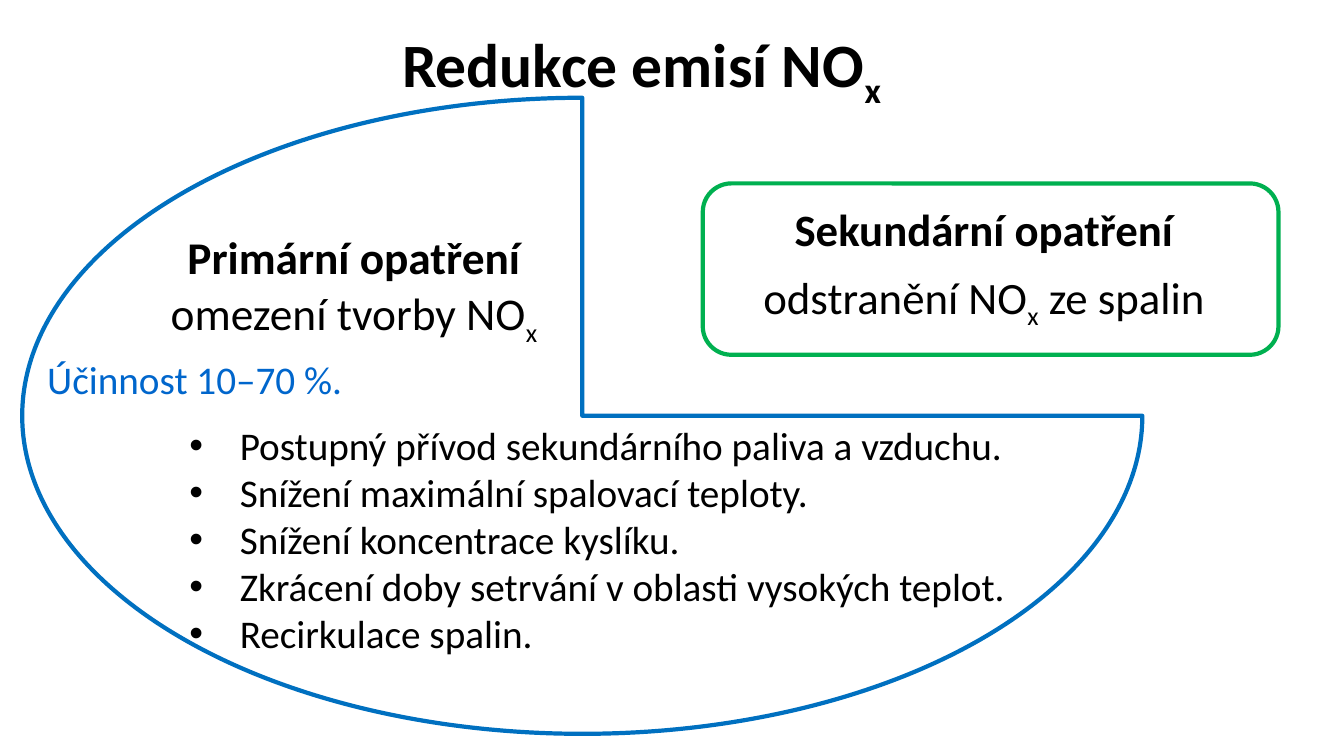
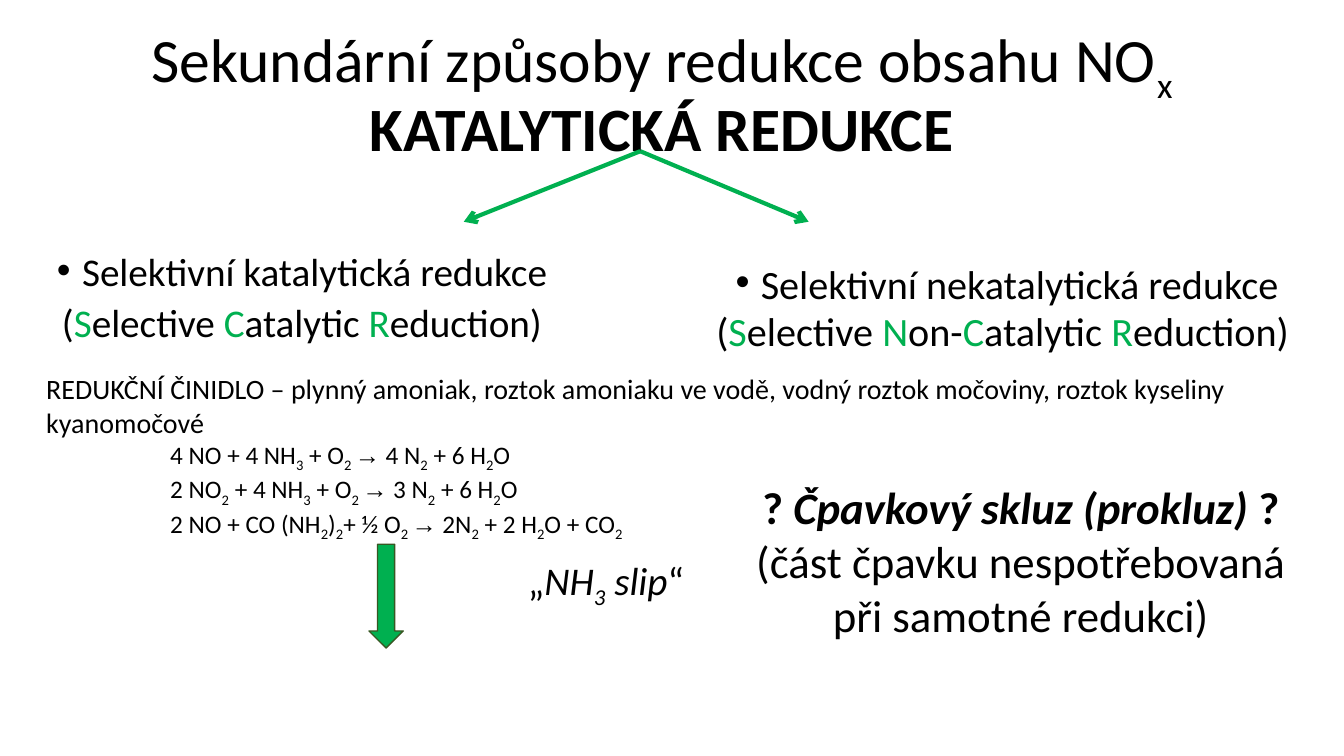
import pptx
import pptx.dml.color
import pptx.enum.shapes
import pptx.enum.text
import pptx.oxml
import pptx.oxml.ns
import pptx.util

PX = 9144  # 100 px to the inch
BLACK, GREEN, BLUE = "000000", "00B050", "0070C0"
SKY, MOSS = "0066CC", "385723"
FACE, SIGN = "Calibri", "Arial"
HEAD = 44
SHAPE = pptx.enum.shapes.MSO_SHAPE
MID = pptx.enum.text.PP_ALIGN.CENTER
LEFT = pptx.enum.text.PP_ALIGN.LEFT


def px(*sizes):
    return [pptx.util.Emu(size * PX) for size in sizes]


def color(code):
    return pptx.dml.color.RGBColor.from_string(code)


def add_xml(parent, tag, **attrs):
    item = pptx.oxml.parse_xml(f"<a:{tag} {pptx.oxml.ns.nsdecls('a')}/>")
    for name, value in attrs.items():
        item.set(name, value)
    parent.append(item)


def split(text, mark, style, base):
    """Make runs of text; every second piece between marks takes style."""
    pieces = text.split(mark)
    return [(piece, {**base, **(style if i % 2 else {})})
            for i, piece in enumerate(pieces) if piece]


def subs(text, **base):
    return split(text, "_", {"sub": True}, base)


def tint(text):
    return split(text, "*", {"hue": GREEN}, {})


def react(text):
    """Make the runs of a reaction, with its arrow in the sign font."""
    left, arrow, right = text.partition("→")
    return subs(left) + [(arrow, {"face": SIGN})] + subs(right)


def add_run(para, text, size, hue=BLACK, bold=False, slant=False,
            sub=False, face=FACE):
    if text == "\n":
        para.add_line_break()
        return
    run = para.add_run()
    run.text = text
    font = run.font
    font.name, font.size = face, pptx.util.Pt(size)
    font.bold, font.italic = bold, slant
    font.color.rgb = color(hue)
    if sub:
        run._r.get_or_add_rPr().set("baseline", "-25000")


def add_dot(para, depth):
    props = para._p.get_or_add_pPr()
    props.set("marL", str(depth * PX))
    props.set("indent", str(-depth * PX))
    add_xml(props, "buFont", typeface=SIGN)
    add_xml(props, "buChar", char="•")


def add_text(slide, box, size, lines, align=LEFT, lead=1.0, gap=0,
             dots=(), depth=25, middle=False, wrap=True):
    """Write lines of runs; dots lists the indexes of bulleted lines."""
    frame = slide.shapes.add_textbox(*px(*box)).text_frame
    frame.word_wrap = wrap
    if middle:
        frame.vertical_anchor = pptx.enum.text.MSO_ANCHOR.MIDDLE
    for i, runs in enumerate(lines):
        para = frame.paragraphs[0] if i == 0 else frame.add_paragraph()
        para.alignment = align
        para.line_spacing = lead
        para.space_before = pptx.util.Pt(gap)
        if i in dots:
            add_dot(para, depth)
        for text, style in runs:
            add_run(para, text, size, **style)


def add_title(slide, box, runs, align=LEFT):
    add_text(slide, box, HEAD, [runs], align, lead=0.9, middle=True)


def add_form(slide, kind, box, edge, width, fill=None):
    form = slide.shapes.add_shape(kind, *px(*box))
    form.shadow.inherit = False
    if fill:
        form.fill.solid()
        form.fill.fore_color.rgb = color(fill)
    else:
        form.fill.background()
    form.line.color.rgb = color(edge)
    form.line.width = pptx.util.Pt(width)


def add_arrow(slide, start, end):
    kind = pptx.enum.shapes.MSO_CONNECTOR.STRAIGHT
    arrow = slide.shapes.add_connector(kind, *px(*start, *end))
    arrow.line.color.rgb = color(GREEN)
    arrow.line.width = pptx.util.Pt(3)
    add_xml(arrow.line._get_or_add_ln(), "tailEnd", type="arrow")
    add_xml(arrow._element.spPr, "effectLst")


def draw_types(slide):
    add_title(slide, (389, 15, 719, 99), subs("Redukce emisí NO_x_", bold=True))
    add_text(slide, (125, 237, 452, 108), 32.4, [
        subs("Primární opatření", bold=True),
        subs("omezení tvorby NO_x_"),
    ], MID, lead=0.7, gap=10)
    add_text(slide, (684, 201, 584, 162), 32, [
        subs("Sekundární opatření", bold=True),
        subs("odstranění NO_x_ ze spalin"),
    ], MID, lead=0.9, gap=10)
    steps = [
        "Postupný přívod sekundárního paliva a vzduchu.",
        "Snížení maximální spalovací teploty.",
        "Snížení koncentrace kyslíku.",
        "Zkrácení doby setrvání v oblasti vysokých teplot.",
        "Recirkulace spalin.",
    ]
    add_text(slide, (178, 413, 1000, 246), 28, [subs(step) for step in steps],
             dots=range(len(steps)), depth=50)
    add_form(slide, SHAPE.ROUNDED_RECTANGLE, (697, 182, 571, 170), GREEN, 3)
    add_form(slide, SHAPE.PIE, (22, 97, 1111, 631), BLUE, 3)
    add_text(slide, (37, 348, 319, 57), 28, [subs("Účinnost 10–70 %.", hue=SKY)])


def draw_ways(slide):
    add_title(slide, (133, 20, 1047, 145),
              subs("Sekundární způsoby redukce obsahu NO_x_")
              + subs("\n") + subs("KATALYTICKÁ REDUKCE", bold=True), MID)
    add_text(slide, (28, 249, 543, 108), 28, [
        tint("Selektivní katalytická redukce"),
        tint("(*S*elective *C*atalytic *R*eduction)"),
    ], MID, lead=0.8, gap=10, dots=[0])
    add_text(slide, (691, 265, 616, 95), 28.7, [
        tint("Selektivní nekatalytická redukce"),
        tint("(*S*elective *N*on-*C*atalytic *R*eduction) "),
    ], MID, lead=0.7, gap=10, dots=[0])
    add_text(slide, (36, 364, 1261, 77), 20, [subs(
        "REDUKČNÍ ČINIDLO – plynný amoniak, roztok amoniaku ve vodě, "
        "vodný roztok močoviny, roztok kyseliny kyanomočové")])
    add_text(slide, (692, 471, 641, 172), 32, [
        subs("? ", bold=True)
        + subs("Čpavkový skluz (prokluz) ", bold=True, slant=True)
        + subs("?", bold=True),
        subs("(část čpavku nespotřebovaná"),
        subs("při samotné redukci)"),
    ], MID)
    for end in ((460, 220), (802, 220)):
        add_arrow(slide, (635, 150), end)
    add_form(slide, SHAPE.DOWN_ARROW, (366, 540, 34, 103), MOSS, 1, GREEN)
    add_text(slide, (512, 547, 178, 57), 28, [
        subs("„") + subs("NH_3_ slip", slant=True) + subs("“"),
    ], MID, wrap=False)
    add_text(slide, (159, 431, 490, 101), 18, [
        react("4 NO + 4 NH_3_ + O_2 _→ 4 N_2_ + 6 H_2_O"),
        react("2 NO_2_ + 4 NH_3_ + O_2 _→ 3 N_2_ + 6 H_2_O"),
        react("2 NO + CO (NH_2_)_2_+ ½ O_2 _→ 2N_2_ + 2 H_2_O + CO_2_"),
    ])


def main():
    deck = pptx.Presentation()
    deck.slide_width, deck.slide_height = px(1333, 750)
    for draw in (draw_types, draw_ways):
        draw(deck.slides.add_slide(deck.slide_layouts[6]))
    deck.save("out.pptx")


if __name__ == "__main__":
    main()
